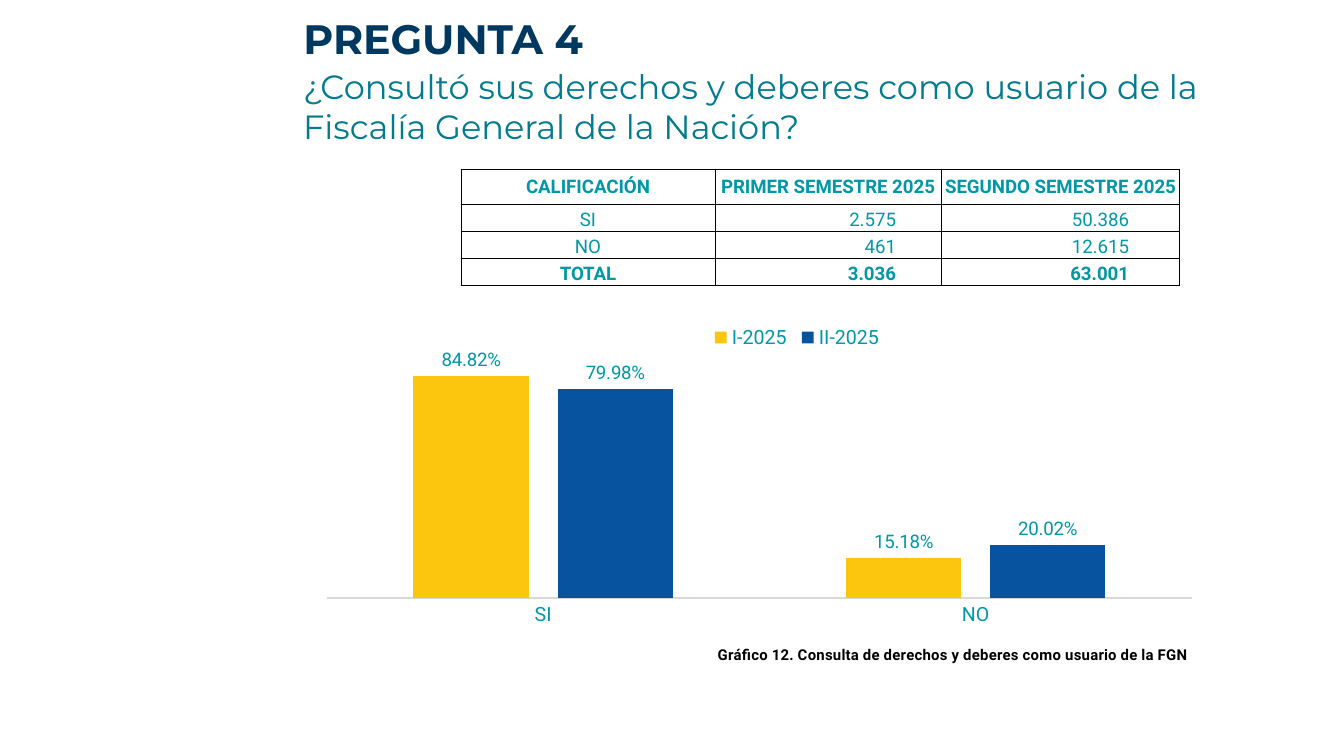
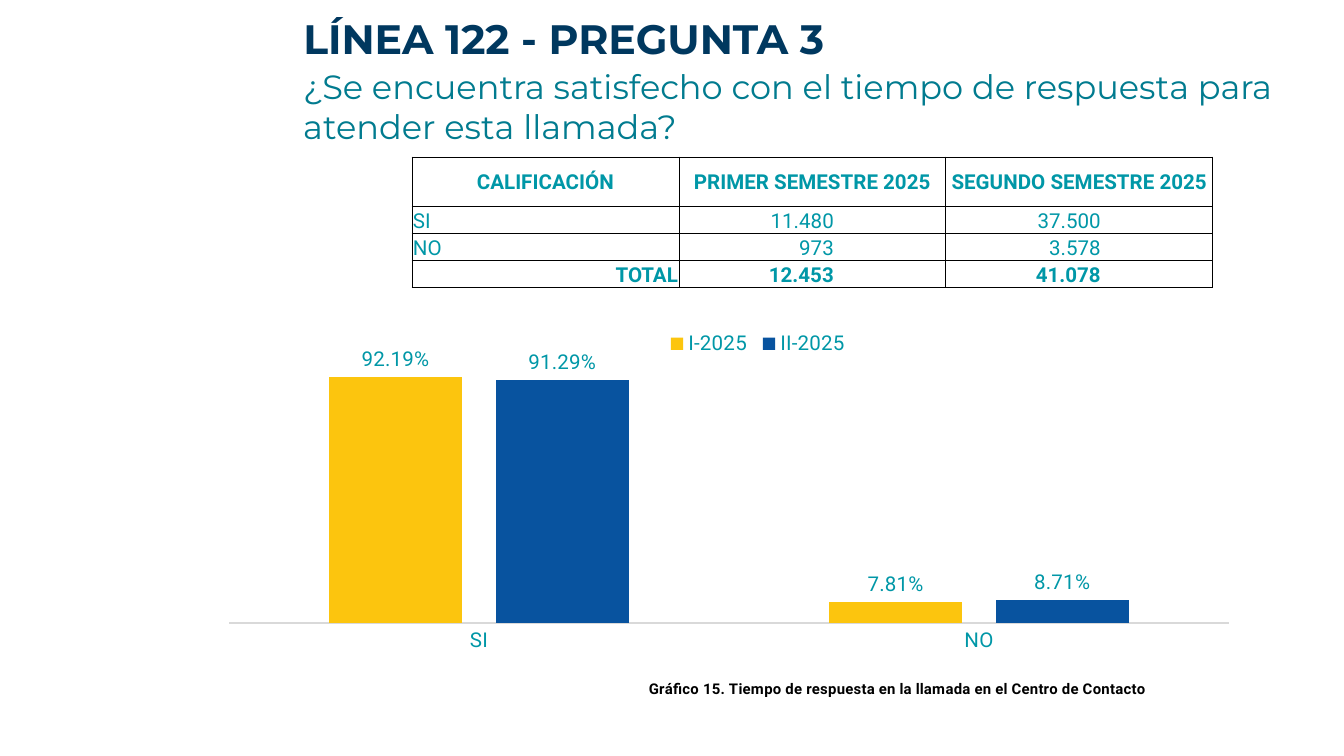
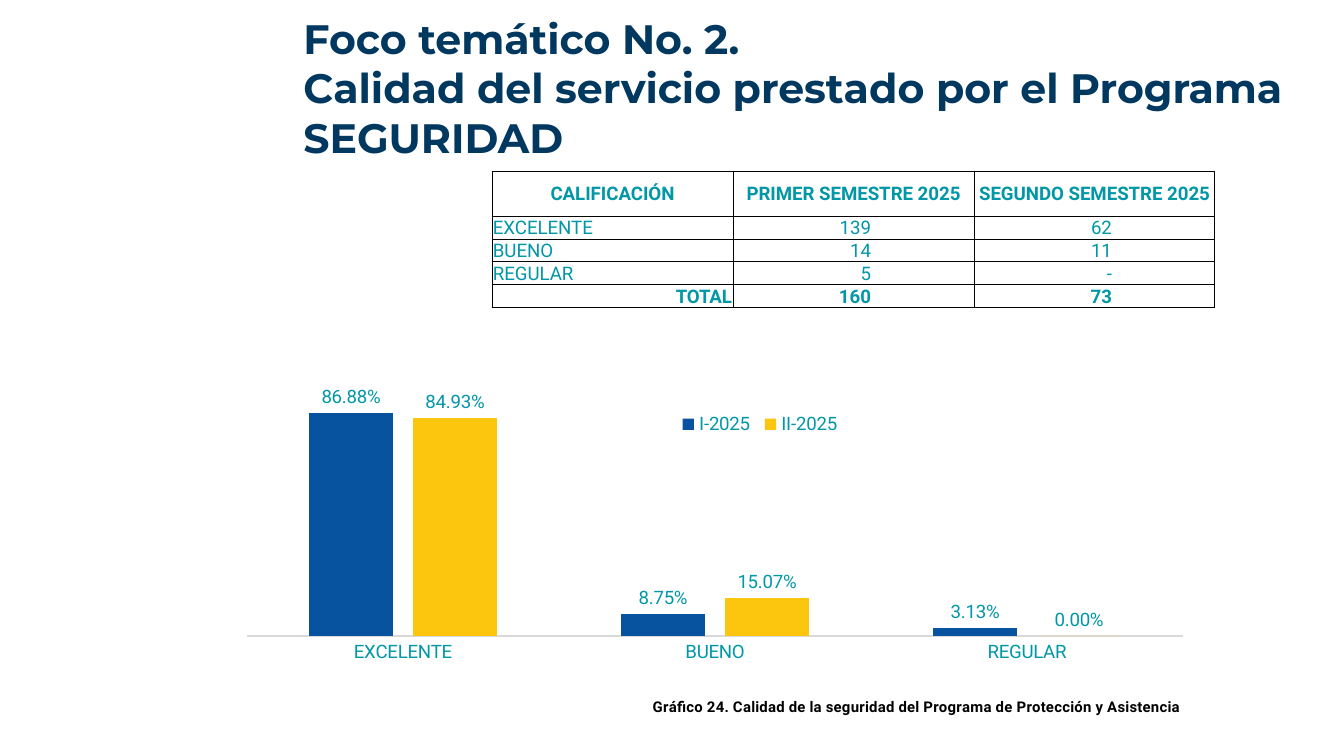
from lxml import etree
from pptx import Presentation
from pptx import util as u
from pptx.chart.data import CategoryChartData
from pptx.dml.color import RGBColor
from pptx.enum import chart as ch, text
from pptx.oxml.ns import qn

PX = 914400 / 134.4
NAVY, TEAL, AQUA = "00385F", "017B8F", "0097A7"
GOLD, BLUE, BLACK, GREY = "FCC50E", "08539F", "000000", "D9D9D9"
HEADING_FONT, BODY_FONT = "Montserrat", "Roboto"
LEFT, CENTER, RIGHT = text.PP_ALIGN.LEFT, text.PP_ALIGN.CENTER, text.PP_ALIGN.RIGHT
TOP, MIDDLE, BOTTOM = text.MSO_ANCHOR.TOP, text.MSO_ANCHOR.MIDDLE, text.MSO_ANCHOR.BOTTOM
HEADER = ("CALIFICACIÓN", "PRIMER SEMESTRE 2025", "SEGUNDO SEMESTRE 2025")
SEMESTERS = ("I-2025", "II-2025")
PERCENT = "0.00%"

QUESTIONS = [
    dict(
        title=["PREGUNTA 4"], title_box=(290, 0, 644, 63),
        question="¿Consultó sus derechos y deberes como usuario de la Fiscalía General de la Nación?",
        question_box=(290, 52, 995, 63),
        answers=[("SI", "2.575", "50.386"), ("NO", "461", "12.615"), ("TOTAL", "3.036", "63.001")],
        table_at=(461, 169), columns=(254, 226, 239), rows=(35, 27), table_size=10,
        label_align=CENTER, total_align=CENTER, number_pads=(45, 51),
        shares={"SI": (0.8482, 0.7998), "NO": (0.1518, 0.2002)}, top_share=0.9,
        chart_box=(280, 297, 934, 372), plot_box=(327, 363, 865, 235),
        legend_box=(706, 325, 182, 25), caption_at=(715, 642), chart_size=10.5, label_size=10,
        colours=(GOLD, BLUE),
        caption="Gráfico 12. Consulta de derechos y deberes como usuario de la FGN",
    ),
    dict(
        title=["LÍNEA 122 - PREGUNTA 3"], title_box=(290, 0, 1015, 81),
        question="¿Se encuentra satisfecho con el tiempo de respuesta para atender esta llamada?",
        question_box=(290, 52, 1027, 63),
        answers=[("SI", "11.480", "37.500"), ("NO", "973", "3.578"), ("TOTAL", "12.453", "41.078")],
        table_at=(412, 157), columns=(267, 267, 267), rows=(49, 27), table_size=11,
        label_align=LEFT, total_align=RIGHT, number_pads=(112, 112),
        shares={"SI": (0.9219, 0.9129), "NO": (0.0781, 0.0871)}, top_share=1,
        chart_box=(211, 312, 1042, 391), plot_box=(229, 357, 1000, 268),
        legend_box=(662, 331, 192, 26), caption_at=(646, 678), chart_size=11, label_size=11,
        colours=(GOLD, BLUE),
        caption="Gráfico 15. Tiempo de respuesta en la llamada en el Centro de Contacto",
    ),
    dict(
        title=["Foco temático No. 2.", "Calidad del servicio prestado por el Programa", "SEGURIDAD"],
        title_box=(290, 0, 1051, 136),
        answers=[("EXCELENTE", "139", "62"), ("BUENO", "14", "11"), ("REGULAR", "5", "-"),
                 ("TOTAL", "160", "73")],
        table_at=(492, 171), columns=(241, 241, 241), rows=(45, 23), table_size=10,
        label_align=LEFT, total_align=RIGHT, number_pads=(103, 103),
        shares={"EXCELENTE": (0.8688, 0.8493), "BUENO": (0.0875, 0.1507), "REGULAR": (0.0313, 0)},
        top_share=1,
        chart_box=(246, 345, 1051, 376), plot_box=(247, 380, 936, 259),
        legend_box=(674, 413, 172, 24), caption_at=(650, 697), chart_size=10, label_size=10,
        colours=(BLUE, GOLD),
        caption="Gráfico 24. Calidad de la seguridad del Programa de Protección y Asistencia",
    ),
]


def px(length):
    return u.Emu(round(length * PX))


def rgb(colour):
    return RGBColor.from_string(colour)


def style(font, size, colour, face=BODY_FONT, bold=False):
    font.size, font.bold, font.name = u.Pt(size), bold, face
    font.color.rgb = rgb(colour)


def write(paragraph, words, align, *look, **options):
    paragraph.alignment = align
    run = paragraph.add_run()
    run.text = words
    style(run.font, *look, **options)


def fill_box(shape, box, lines, *look, **options):
    shape.left, shape.top, shape.width, shape.height = map(px, box)
    frame = shape.text_frame
    frame.word_wrap = True
    frame.auto_size = text.MSO_AUTO_SIZE.NONE
    frame.vertical_anchor = TOP
    frame.margin_left = frame.margin_right = frame.margin_top = frame.margin_bottom = u.Inches(0.1)
    for index, line in enumerate(lines):
        paragraph = frame.add_paragraph() if index else frame.paragraphs[0]
        write(paragraph, line, LEFT, *look, **options)


def outline(cell):
    properties = cell._tc.get_or_add_tcPr()
    for index, side in enumerate(("lnL", "lnR", "lnT", "lnB")):
        line = etree.Element(qn(f"a:{side}"), w=str(u.Pt(0.5)))
        solid = etree.SubElement(line, qn("a:solidFill"))
        etree.SubElement(solid, qn("a:srgbClr"), val=BLACK)
        properties.insert(index, line)


def add_answers(slide, q):
    grid = [HEADER, *q["answers"]]
    heights = [q["rows"][0]] + [q["rows"][1]] * len(q["answers"])
    box = (*q["table_at"], sum(q["columns"]), sum(heights))
    table = slide.shapes.add_table(len(grid), len(HEADER), *map(px, box)).table
    table.first_row = table.horz_banding = False
    for column, width in zip(table.columns, q["columns"]):
        column.width = px(width)
    for r, (row, height) in enumerate(zip(grid, heights)):
        table.rows[r].height = px(height)
        total = row[0] == "TOTAL"
        for c, words in enumerate(row):
            cell = table.cell(r, c)
            cell.fill.background()
            outline(cell)
            cell.margin_left = cell.margin_right = cell.margin_top = px(1)
            cell.margin_bottom = 0
            cell.vertical_anchor = BOTTOM if r else MIDDLE
            if r == 0:
                align = CENTER
            elif c == 0:
                align = q["total_align"] if total else q["label_align"]
            else:
                align = RIGHT
                cell.margin_right = px(q["number_pads"][c - 1])
            write(cell.text_frame.paragraphs[0], words, align, q["table_size"], AQUA,
                  bold=r == 0 or total)


def place(part, box, chart_box):
    """Pin a chart part to a slide box, as fractions of the chart."""
    for old in part.findall(qn("c:layout")):
        part.remove(old)
    layout = etree.Element(qn("c:layout"))
    manual = etree.SubElement(layout, qn("c:manualLayout"))
    overlay = part.find(qn("c:overlay"))
    if overlay is None:
        part.insert(0, layout)
        etree.SubElement(manual, qn("c:layoutTarget"), val="inner")
    else:
        overlay.addprevious(layout)
    for axis in "xy":
        etree.SubElement(manual, qn(f"c:{axis}Mode"), val="edge")
    left, top, width, height = chart_box
    starts, extents = (left, top, 0, 0), (width, height, width, height)
    for key, value, start, extent in zip("xywh", box, starts, extents):
        etree.SubElement(manual, qn(f"c:{key}"), val=f"{(value - start) / extent:.4f}")


def add_shares(slide, q):
    data = CategoryChartData(number_format=PERCENT)
    data.categories = list(q["shares"])
    for semester, values in zip(SEMESTERS, zip(*q["shares"].values())):
        data.add_series(semester, values)
    box = q["chart_box"]
    chart = slide.shapes.add_chart(ch.XL_CHART_TYPE.COLUMN_CLUSTERED, *map(px, box), data).chart
    style(chart.font, q["chart_size"], AQUA)

    chart.has_title = True
    title = chart.chart_title
    write(title.text_frame.paragraphs[0], q["caption"], RIGHT, 8, BLACK, bold=True)
    place(title._element, q["caption_at"], box)

    chart.has_legend = True
    legend = chart.legend
    legend.position = ch.XL_LEGEND_POSITION.TOP
    legend.include_in_layout = False
    style(legend.font, q["chart_size"], AQUA)
    place(legend._element, q["legend_box"], box)

    shares = chart.value_axis
    shares.visible = shares.has_major_gridlines = False
    shares.minimum_scale, shares.maximum_scale = 0, q["top_share"]
    shares.tick_labels.number_format = PERCENT
    shares.tick_labels.number_format_is_linked = False
    ratings = chart.category_axis
    ratings.major_tick_mark = ratings.minor_tick_mark = ch.XL_TICK_MARK.NONE
    ratings.format.line.color.rgb = rgb(GREY)
    ratings.format.line.width = u.Pt(1)
    style(ratings.tick_labels.font, q["chart_size"], AQUA)

    plot = chart.plots[0]
    plot.gap_width, plot.overlap, plot.vary_by_categories = 150, -25, False
    for series, colour in zip(plot.series, q["colours"]):
        series.format.fill.solid()
        series.format.fill.fore_color.rgb = rgb(colour)
        series.invert_if_negative = False
        labels = series.data_labels
        labels.show_value = True
        labels.number_format, labels.number_format_is_linked = PERCENT, False
        labels.position = ch.XL_LABEL_POSITION.OUTSIDE_END
        style(labels.font, q["label_size"], AQUA)
    place(chart._chartSpace.chart.plotArea, q["plot_box"], box)


def main():
    deck = Presentation()
    deck.slide_width, deck.slide_height = px(1344), px(756)
    for q in QUESTIONS:
        slide = deck.slides.add_slide(deck.slide_layouts[5])
        fill_box(slide.shapes.title, q["title_box"], q["title"], 22, NAVY, HEADING_FONT, bold=True)
        if "question" in q:
            question = slide.shapes.add_textbox(0, 0, 0, 0)
            fill_box(question, q["question_box"], [q["question"]], 18, TEAL, HEADING_FONT)
        add_answers(slide, q)
        add_shares(slide, q)
    deck.save("out.pptx")


if __name__ == "__main__":
    main()
